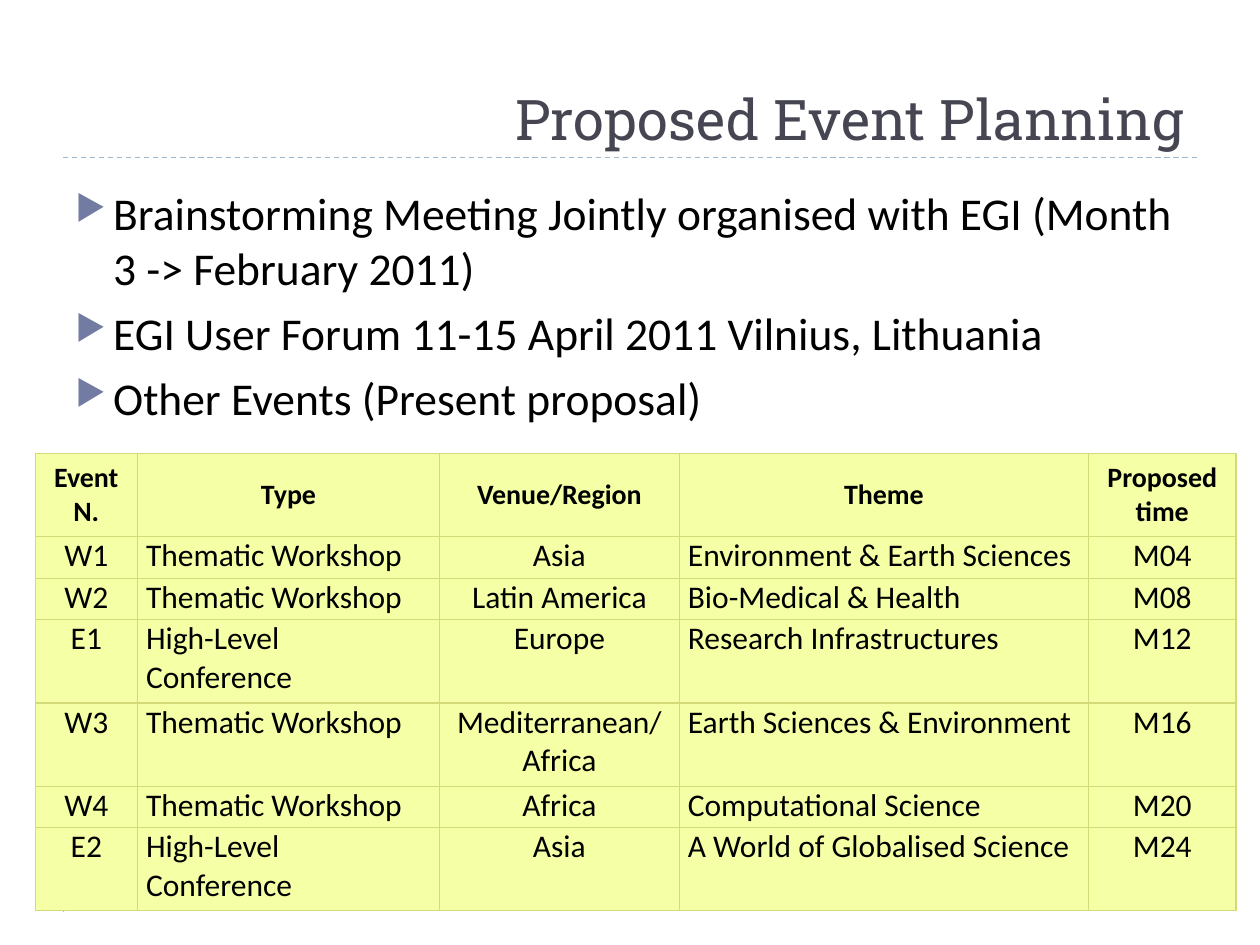
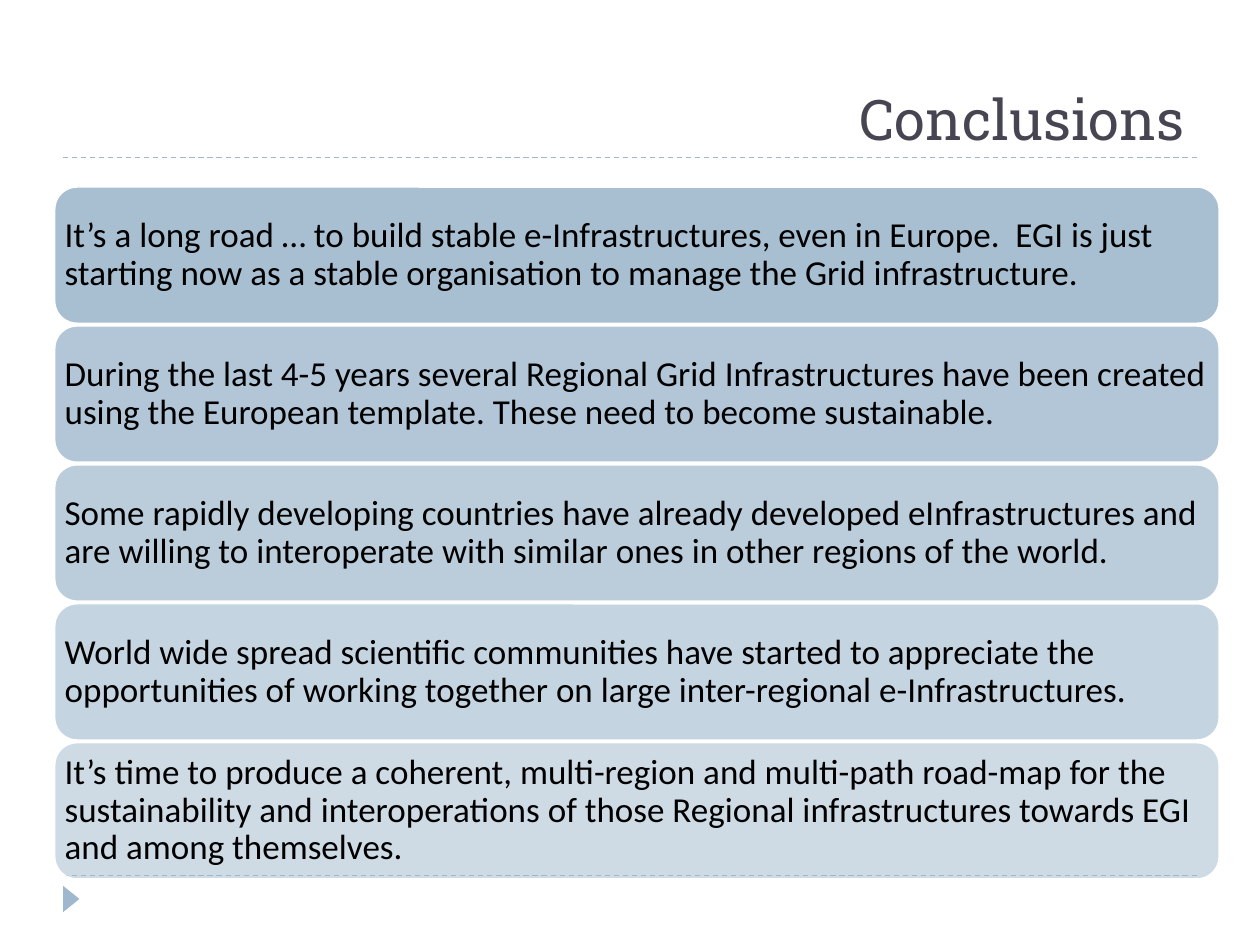
from dataclasses import dataclass

from lxml.etree import SubElement
from pptx import Presentation
from pptx.dml.color import RGBColor
from pptx.enum.dml import MSO_LINE
from pptx.enum.shapes import MSO_CONNECTOR, MSO_SHAPE
from pptx.enum.text import MSO_ANCHOR, PP_ALIGN
from pptx.oxml.ns import qn
from pptx.util import Inches, Pt


@dataclass(frozen=True)
class Theme:
    title_font: str = "Roboto Slab"
    body_font: str = "Calibri"
    title_color: str = "464653"
    text_color: str = "000000"
    accent: str = "9FB8CD"
    bullet_color: str = "727CA3"
    table_fill: str = "F5FFA6"
    table_border: str = "D2DA7A"
    white: str = "FFFFFF"
    title_size: int = 32
    bullet_size: int = 26
    band_size: int = 20
    cell_size: int = 18
    header_size: int = 16


def rgb(color):
    return RGBColor.from_string(color)


def box(*lengths):
    return [Inches(length) for length in lengths]


def add_xml(parent, tag, **attributes):
    return SubElement(parent, qn(tag), attributes)


def set_margins(target, horizontal, vertical):
    target.margin_left = target.margin_right = Inches(horizontal)
    target.margin_top = target.margin_bottom = Inches(vertical)


class Deck:
    def __init__(self, theme):
        self.theme = theme
        self.presentation = Presentation()
        self.presentation.slide_width = Inches(10)
        self.presentation.slide_height = Inches(7.5)
        self.slide = None

    def add_slide(self, title):
        self.slide = self.presentation.slides.add_slide(self.presentation.slide_layouts[6])
        for rule_top in (6.95, 1.25):
            self.add_rule(rule_top)
        self.add_marker()
        self.add_title(title)

    def style(self, paragraph, size, font=None, color=None, bold=False):
        for run in paragraph.runs:
            run.font.name = font or self.theme.body_font
            run.font.size = Pt(size)
            run.font.bold = bold
            run.font.color.rgb = rgb(color or self.theme.text_color)

    def add_rule(self, top):
        rule = self.slide.shapes.add_connector(MSO_CONNECTOR.STRAIGHT, *box(0.5, top, 9.5, top))
        rule.line.color.rgb = rgb(self.theme.accent)
        rule.line.width = Pt(0.75)
        rule.line.dash_style = MSO_LINE.DASH
        add_xml(rule._element.spPr, "a:effectLst")

    def add_marker(self):
        marker = self.slide.shapes.add_shape(
            MSO_SHAPE.ISOSCELES_TRIANGLE, *box(0.46, 7.07, 0.21, 0.13))
        marker.rotation = 90
        marker.shadow.inherit = False
        marker.fill.solid()
        marker.fill.fore_color.rgb = rgb(self.theme.accent)
        marker.line.fill.background()

    def add_text_frame(self, text, *bounds):
        frame = self.slide.shapes.add_textbox(*box(*bounds)).text_frame
        frame.word_wrap = True
        frame.text = text
        return frame

    def add_title(self, text):
        frame = self.add_text_frame(text, 2.32, 0.17, 7.18, 1.08)
        frame.vertical_anchor = MSO_ANCHOR.BOTTOM
        heading = frame.paragraphs[0]
        heading.alignment = PP_ALIGN.RIGHT
        self.style(heading, self.theme.title_size, self.theme.title_font, self.theme.title_color)

    def add_bullets(self, items, *bounds):
        frame = self.add_text_frame("\n".join(items), *bounds)
        for index, paragraph in enumerate(frame.paragraphs):
            properties = paragraph._p.get_or_add_pPr()
            properties.set("marL", str(Inches(0.3)))
            properties.set("indent", str(Inches(-0.3)))
            bullet_color = add_xml(properties, "a:buClr")
            add_xml(bullet_color, "a:srgbClr", val=self.theme.bullet_color)
            add_xml(properties, "a:buSzPct", val="76000")
            add_xml(properties, "a:buChar", char="▶")
            if index:
                paragraph.space_before = Pt(6)
            self.style(paragraph, self.theme.bullet_size)

    def add_table(self, rows, left, top, widths, heights, alignments):
        frame = self.slide.shapes.add_table(
            len(rows), len(widths), *box(left, top, sum(widths), sum(heights)))
        table = frame.table
        table.first_row = table.horz_banding = False
        for column, width in zip(table.columns, widths):
            column.width = Inches(width)
        for row, height in zip(table.rows, heights):
            row.height = Inches(height)
        for row_index, texts in enumerate(rows):
            for column_index, text in enumerate(texts):
                is_header = row_index == 0
                alignment = PP_ALIGN.CENTER if is_header else alignments[column_index]
                self.fill_cell(table.cell(row_index, column_index), text, alignment, is_header)

    def fill_cell(self, cell, text, alignment, is_header):
        cell.text = text
        set_margins(cell, 0.07, 0)
        cell.vertical_anchor = MSO_ANCHOR.MIDDLE if is_header else MSO_ANCHOR.TOP
        properties = cell._tc.get_or_add_tcPr()
        for side in ("a:lnL", "a:lnR", "a:lnT", "a:lnB"):
            border = add_xml(properties, side, w=str(Pt(0.75)))
            add_xml(add_xml(border, "a:solidFill"), "a:srgbClr", val=self.theme.table_border)
        cell.fill.solid()
        cell.fill.fore_color.rgb = rgb(self.theme.table_fill)
        size = self.theme.header_size if is_header else self.theme.cell_size
        for paragraph in cell.text_frame.paragraphs:
            paragraph.alignment = alignment
            self.style(paragraph, size, bold=is_header)

    def add_band(self, text, opacity, *bounds):
        band = self.slide.shapes.add_shape(MSO_SHAPE.ROUNDED_RECTANGLE, *box(*bounds))
        band.shadow.inherit = False
        band.fill.solid()
        band.fill.fore_color.rgb = rgb(self.theme.accent)
        fill_color = band._element.spPr.find(qn("a:solidFill")).find(qn("a:srgbClr"))
        add_xml(fill_color, "a:alpha", val=str(opacity * 1000))
        band.line.color.rgb = rgb(self.theme.white)
        band.line.width = Pt(1.5)
        frame = band.text_frame
        frame.word_wrap = True
        frame.vertical_anchor = MSO_ANCHOR.MIDDLE
        set_margins(frame, 0.03, 0.03)
        frame.text = text
        statement = frame.paragraphs[0]
        statement.alignment = PP_ALIGN.LEFT
        statement.line_spacing = 0.9
        self.style(statement, self.theme.band_size)


EVENT_GOALS = [
    "Brainstorming Meeting Jointly organised with EGI (Month 3 -> February 2011)",
    "EGI User Forum 11-15 April 2011 Vilnius, Lithuania",
    "Other Events (Present proposal)",
]

EVENTS = [
    ("Event\nN.", "Type", "Venue/Region", "Theme", "Proposed\ntime"),
    ("W1", "Thematic Workshop", "Asia", "Environment & Earth Sciences", "M04"),
    ("W2", "Thematic Workshop", "Latin America", "Bio-Medical & Health", "M08"),
    ("E1", "High-Level Conference", "Europe", "Research Infrastructures", "M12"),
    ("W3", "Thematic Workshop", "Mediterranean/\nAfrica", "Earth Sciences & Environment", "M16"),
    ("W4", "Thematic Workshop", "Africa", "Computational Science", "M20"),
    ("E2", "High-Level Conference", "Asia", "A World of Globalised Science", "M24"),
]

CONCLUSIONS = [
    "It’s a long road … to build stable e-Infrastructures, even in Europe.  EGI is just "
    "starting now as a stable organisation to manage the Grid infrastructure.",
    "During the last 4-5 years several Regional Grid Infrastructures have been created "
    "using the European template. These need to become sustainable.",
    "Some rapidly developing countries have already developed eInfrastructures and "
    "are willing to interoperate with similar ones in other regions of the world.",
    "World wide spread scientific communities have started to appreciate the "
    "opportunities of working together on large inter-regional e-Infrastructures.",
    "It’s time to produce a coherent, multi-region and multi-path road-map for the "
    "sustainability and interoperations of those Regional infrastructures towards EGI "
    "and among themselves.",
]


def build_event_planning(deck):
    deck.add_slide("Proposed Event Planning")
    deck.add_bullets(EVENT_GOALS, 0.5, 1.42, 9, 2.33)
    center, justify = PP_ALIGN.CENTER, PP_ALIGN.JUSTIFY
    single, double = 0.33, 0.66
    deck.add_table(
        EVENTS, 0.28, 3.6,
        widths=[0.81, 2.4, 1.9, 3.25, 1.17],
        heights=[double, single, single, double, double, single, double],
        alignments=[center, justify, center, justify, center],
    )


def build_conclusions(deck):
    deck.add_slide("Conclusions")
    for index, conclusion in enumerate(CONCLUSIONS):
        deck.add_band(conclusion, 90 - 10 * index, 0.43, 1.48 + 1.1025 * index, 9.25, 1.09)


def main():
    deck = Deck(Theme())
    build_event_planning(deck)
    build_conclusions(deck)
    deck.presentation.save("out.pptx")


if __name__ == "__main__":
    main()
